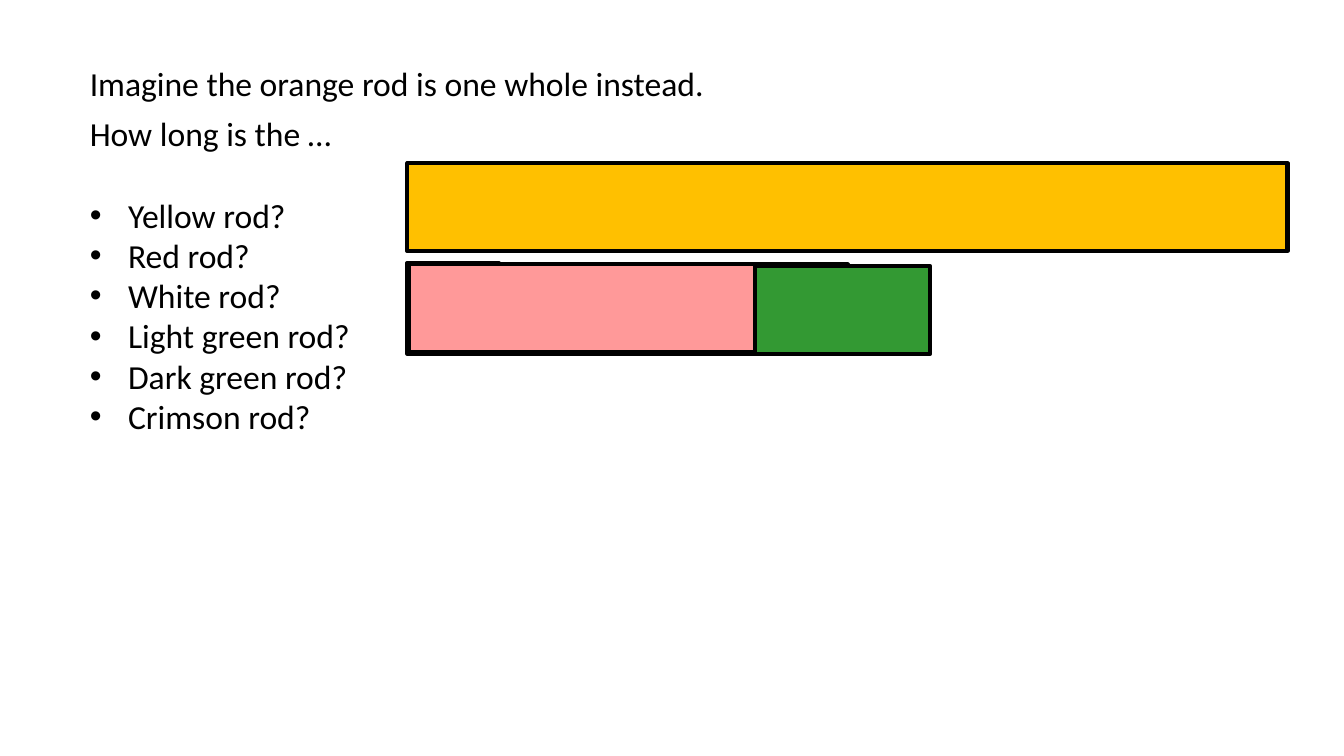
from dataclasses import dataclass

from lxml.etree import SubElement
from pptx import Presentation
from pptx.dml.color import RGBColor
from pptx.enum.shapes import MSO_SHAPE
from pptx.enum.text import MSO_ANCHOR, MSO_AUTO_SIZE, PP_ALIGN
from pptx.oxml.ns import qn
from pptx.slide import Slide
from pptx.text.text import TextFrame
from pptx.util import Inches, Pt

# Rod grid, in inches: the orange rod spans ten columns
GRID_LEFT, GRID_TOP = 4.04, 1.62
COLUMN_WIDTH = 8.73 / 10
ROW_PITCH, ROD_HEIGHT = 1.0, 0.87
BLACK = "000000"
BULLET_INDENT = Inches(0.38)


@dataclass(frozen=True)
class Rod:
    columns: float
    fill: str
    row: float = 1
    column: float = 0


@dataclass(frozen=True)
class Line:
    text: str
    space_before: float = 0
    bulleted: bool = False


# Back to front
RODS = [
    Rod(10, "FFC000", row=0),
    Rod(5, "FFFF00"),
    Rod(1.04, "FFFFFF", row=0.99),
    Rod(5.94, "339933", row=1.02),
    Rod(3.93, "FF9999", column=0.02),
]
ROD_NAMES = ["Yellow", "Red", "White", "Light green", "Dark green", "Crimson"]
LINES = [
    Line("Imagine the orange rod is one whole instead."),
    Line("How long is the …", space_before=7.3),
] + [
    Line(f"{name} rod?", space_before=0 if number else 29.3, bulleted=True)
    for number, name in enumerate(ROD_NAMES)
]


def color(value: str) -> RGBColor:
    return RGBColor.from_string(value)


def set_attributes(target: object, values: dict) -> None:
    for name, value in values.items():
        setattr(target, name, value)


def draw_rod(slide: Slide, rod: Rod) -> None:
    shape = slide.shapes.add_shape(
        MSO_SHAPE.RECTANGLE,
        Inches(GRID_LEFT + rod.column * COLUMN_WIDTH),
        Inches(GRID_TOP + rod.row * ROW_PITCH),
        Inches(rod.columns * COLUMN_WIDTH),
        Inches(ROD_HEIGHT),
    )
    shape.shadow.inherit = False
    shape.fill.solid()
    shape.fill.fore_color.rgb = color(rod.fill)
    shape.line.color.rgb = color(BLACK)
    shape.line.width = Pt(3)


def write_line(text_frame: TextFrame, line: Line, first: bool) -> None:
    paragraph = text_frame.paragraphs[0] if first else text_frame.add_paragraph()
    properties = paragraph._p.get_or_add_pPr()
    indent = BULLET_INDENT if line.bulleted else 0
    properties.set("marL", str(indent))
    properties.set("indent", str(-indent))
    if line.bulleted:
        bullet_color = SubElement(properties, qn("a:buClr"))
        SubElement(bullet_color, qn("a:srgbClr"), val=BLACK)
        SubElement(properties, qn("a:buFont"), typeface="Arial")
        SubElement(properties, qn("a:buChar"), char="•")
    else:
        SubElement(properties, qn("a:buNone"))
    set_attributes(paragraph, {
        "text": line.text,
        "alignment": PP_ALIGN.LEFT,
        "line_spacing": 1.0,
        "space_before": Pt(line.space_before),
        "space_after": Pt(0),
    })
    set_attributes(paragraph.font, {"name": "Calibri", "size": Pt(24)})
    paragraph.font.color.rgb = color(BLACK)


def main() -> None:
    presentation = Presentation()
    presentation.slide_width = Inches(13.33)
    presentation.slide_height = Inches(7.5)
    slide = presentation.slides.add_slide(presentation.slide_layouts[1])

    # The questions fill the body, so the title placeholder goes
    title = slide.shapes.title
    title.element.getparent().remove(title.element)

    # Questions
    body = slide.placeholders[1]
    set_attributes(body, {
        "left": Inches(0.79),
        "top": Inches(0.57),
        "width": Inches(6.99),
        "height": Inches(3.84),
    })
    set_attributes(body.text_frame, {
        "word_wrap": True,
        "auto_size": MSO_AUTO_SIZE.SHAPE_TO_FIT_TEXT,
        "vertical_anchor": MSO_ANCHOR.TOP,
        "margin_left": Inches(0.1),
        "margin_right": Inches(0.1),
        "margin_top": Inches(0.05),
        "margin_bottom": Inches(0.05),
    })
    for number, line in enumerate(LINES):
        write_line(body.text_frame, line, first=number == 0)

    # Rods
    for rod in RODS:
        draw_rod(slide, rod)

    presentation.save("out.pptx")


if __name__ == "__main__":
    main()
